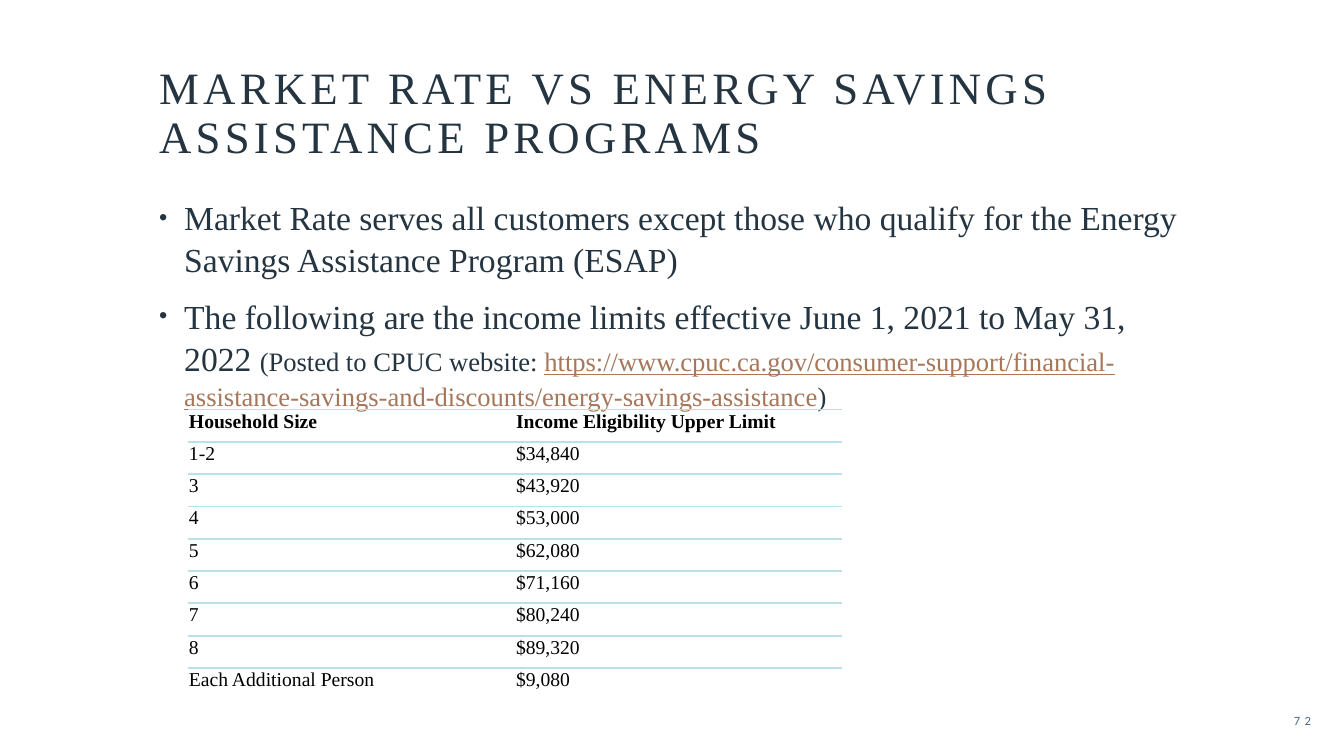
import pptx
import pptx.dml.color
import pptx.enum.text
import pptx.oxml
import pptx.oxml.ns
import pptx.util

PX = 9525  # EMU per px, 96 px to the inch
SERIF = "Times New Roman"
COLORS = {
    "ink": "243541",
    "link": "A6775A",
    "number": "486B83",
    "cell": "000000",
    "rule": "B9E1EC",
}
ALIGN = pptx.enum.text.PP_ALIGN
ANCHOR = pptx.enum.text.MSO_ANCHOR


def style(font, size, color, name=SERIF, spacing=0):
    font.name = name
    font.size = pptx.util.Pt(size)
    font.color.rgb = pptx.dml.color.RGBColor.from_string(COLORS[color])
    if spacing:
        font._element.set("spc", str(spacing * 100))


def place(shape, left, top, width, height):
    shape.left, shape.top = left * PX, top * PX
    shape.width, shape.height = width * PX, height * PX


deck = pptx.Presentation()
deck.slide_width, deck.slide_height = 1280 * PX, 720 * PX
page = deck.slides.add_slide(deck.slide_layouts[5])

# Title
title = page.shapes.title
place(title, 142, 16, 996, 144)
title.text_frame.text = "MARKET RATE VS ENERGY SAVINGS ASSISTANCE PROGRAMS"
title.text_frame.word_wrap = True
title.text_frame.vertical_anchor = ANCHOR.BOTTOM
para = title.text_frame.paragraphs[0]
para.alignment = ALIGN.LEFT
para.line_spacing = 0.9
style(para.font, 32, "ink", spacing=3)

# Bulleted text: each span is text, size, colour, underline
bullets = [
    [("Market Rate serves all customers except those who qualify for the "
      "Energy Savings Assistance Program (ESAP)", 24, "ink", False)],
    [("The following are the income limits effective June 1, 2021 to "
      "May 31, 2022 ", 24, "ink", False),
     ("(Posted to CPUC website: ", 19, "ink", False),
     ("https://www.cpuc.ca.gov/consumer-support/financial-assistance-"
      "savings-and-discounts/energy-savings-assistance", 19, "link", True),
     (")", 19, "ink", True)],
]
body = page.shapes.add_textbox(142 * PX, 181 * PX, 996 * PX, 228 * PX)
body.text_frame.word_wrap = True
for index, spans in enumerate(bullets):
    para = body.text_frame.add_paragraph() if index else body.text_frame.paragraphs[0]
    para.line_spacing = 1.05
    para.space_before = pptx.util.Pt(10 if index else 0)
    props = para._p.get_or_add_pPr()
    props.set("marL", str(24 * PX))
    props.set("indent", str(-24 * PX))
    for tag, key, value in (("buSzPct", "val", "70000"),
                            ("buFont", "typeface", "Arial"),
                            ("buChar", "char", "•")):
        props.append(pptx.oxml.parse_xml(
            f'<a:{tag} {pptx.oxml.ns.nsdecls("a")} {key}="{value}"/>'))
    for text, size, color, underline in spans:
        span = para.add_run()
        span.text = text
        style(span.font, size, color)
        if underline:
            span.font.underline = True

# Income limits table
limits = [
    ("Household Size", "Income Eligibility Upper Limit"),
    ("1-2", "$34,840"),
    ("3", "$43,920"),
    ("4", "$53,000"),
    ("5", "$62,080"),
    ("6", "$71,160"),
    ("7", "$80,240"),
    ("8", "$89,320"),
    ("Each Additional Person", "$9,080"),
]
table = page.shapes.add_table(
    len(limits), 2, 179 * PX, 390 * PX, 623 * PX, 277 * PX).table
table.horz_banding = False
table.first_row = False
rule = f'<a:solidFill><a:srgbClr val="{COLORS["rule"]}"/></a:solidFill>'
for row, texts in enumerate(limits):
    for column, text in enumerate(texts):
        cell = table.cell(row, column)
        cell.text = text
        cell.margin_left = cell.margin_right = PX
        cell.margin_top = cell.margin_bottom = PX
        para = cell.text_frame.paragraphs[0]
        style(para.font, 14, "cell")
        para.font.bold = row == 0
        # Horizontal rules only, none under the last row
        ruled = {"T"} if row == len(limits) - 1 else {"T", "B"}
        for side in "LRTB":
            line = rule if side in ruled else "<a:noFill/>"
            cell._tc.get_or_add_tcPr().append(pptx.oxml.parse_xml(
                f'<a:ln{side} {pptx.oxml.ns.nsdecls("a")} w="19050">{line}</a:ln{side}>'))
        cell.fill.background()

# Page number
number = page.shapes.add_textbox(1167 * PX, 667 * PX, 91 * PX, 38 * PX)
number.text_frame.word_wrap = True
number.text_frame.vertical_anchor = ANCHOR.MIDDLE
para = number.text_frame.paragraphs[0]
para.text = "72"
para.alignment = ALIGN.RIGHT
style(para.font, 9, "number", "Calibri", spacing=3)

deck.save("out.pptx")
